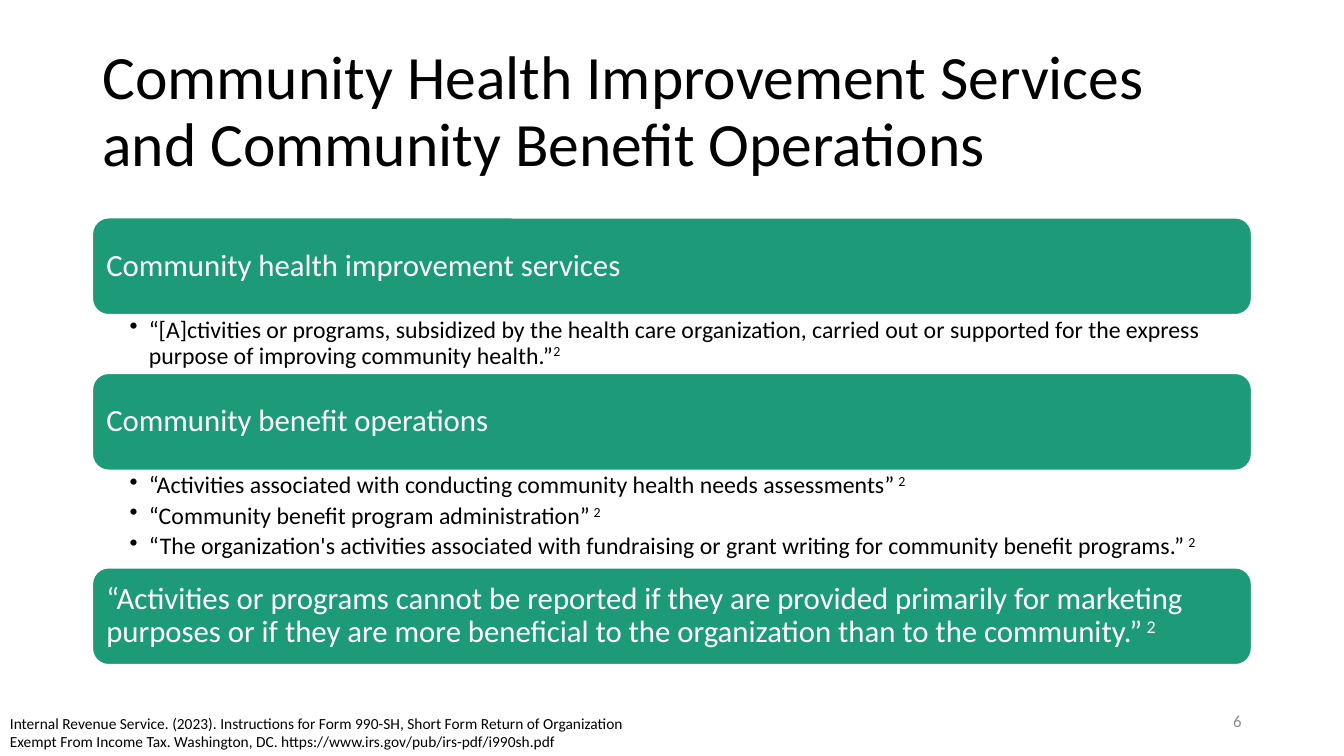
from lxml import etree
from pptx import Presentation
from pptx.dml.color import RGBColor
from pptx.enum.shapes import MSO_SHAPE
from pptx.enum.text import MSO_ANCHOR, PP_ALIGN
from pptx.oxml.ns import qn
from pptx.util import Cm, Pt

ROUND = MSO_SHAPE.ROUNDED_RECTANGLE
TOP, MIDDLE = MSO_ANCHOR.TOP, MSO_ANCHOR.MIDDLE
LEFT, RIGHT = PP_ALIGN.LEFT, PP_ALIGN.RIGHT
EDGE, WIDTH = 2.33, 29.21
PADS = (0.25, 0.13, 0.25, 0.13)

SECTIONS = [
    ("Community health improvement services", 1.48, [
        "“[A]ctivities or programs, subsidized by the health care organization, "
        "carried out or supported for the express purpose of improving "
        "community health.”^2",
    ]),
    ("Community benefit operations", 2.46, [
        "“Activities associated with conducting community health needs assessments”^ 2",
        "“Community benefit program administration”^ 2",
        "“The organization's activities associated with fundraising or grant "
        "writing for community benefit programs.”^ 2",
    ]),
    ("“Activities or programs cannot be reported if they are provided primarily "
     "for marketing purposes or if they are more beneficial to the organization "
     "than to the community.”^ 2", 0, []),
]


def color(code):
    return RGBColor.from_string(code)


def write(frame, *lines, size=18, ink="000000", align=LEFT, anchor=TOP,
          pads=PADS, pitch=1.0, after=0, bullet=False):
    frame.word_wrap = True
    frame.vertical_anchor = anchor
    (frame.margin_left, frame.margin_top,
     frame.margin_right, frame.margin_bottom) = map(Cm, pads)
    for i, line in enumerate(lines):
        para = frame.add_paragraph() if i else frame.paragraphs[0]
        para.alignment = align
        para.line_spacing = pitch
        para.space_after = Pt(after)
        if bullet:
            props = para._p.get_or_add_pPr()
            props.set("marL", str(Cm(0.48)))
            props.set("indent", str(Cm(-0.48)))
            etree.SubElement(props, qn("a:buChar")).set("char", "•")
        for j, part in enumerate(line.split("^")):
            run = para.add_run()
            run.text = part
            font = run.font
            font.name, font.size = "Calibri", Pt(size)
            font.color.rgb = color(ink)
            if j:
                run._r.get_or_add_rPr().set("baseline", "30000")


class Page:
    green, white = "1D9A78", "FFFFFF"

    def __init__(self, deck):
        self.slide = deck.slides.add_slide(deck.slide_layouts[6])

    def text(self, box, *lines, **style):
        shape = self.slide.shapes.add_textbox(*map(Cm, box))
        write(shape.text_frame, *lines, **style)

    def banner(self, box, label):
        shape = self.slide.shapes.add_shape(ROUND, *map(Cm, box))
        shape.shadow.inherit = False
        shape.fill.solid()
        shape.fill.fore_color.rgb = color(self.green)
        shape.line.color.rgb = color(self.white)
        shape.line.width = Pt(1)
        write(shape.text_frame, label, size=22, ink=self.white,
              anchor=MIDDLE, pads=(0.23,) * 4, pitch=0.9)

    def points(self, box, lines):
        self.text(box, *lines, size=17, pads=(0.94, 0.08, 0.43, 0.08),
                  pitch=0.9, after=3.4, bullet=True)


def main():
    deck = Presentation()
    deck.slide_width, deck.slide_height = Cm(33.87), Cm(19.05)
    page = Page(deck)
    page.text((EDGE, 1.01, WIDTH, 3.68),
              "Community Health Improvement Services and Community Benefit Operations",
              size=44, anchor=MIDDLE, pitch=0.9)
    top, tall = 5.49, 2.44
    for label, depth, lines in SECTIONS:
        page.banner((EDGE, top, WIDTH, tall), label)
        top += tall
        if lines:
            page.points((EDGE, top, WIDTH, depth), lines)
            top += depth
    page.text((23.92, 17.66, 7.62, 1.01), "6", size=12, ink="8C8C8C",
              align=RIGHT, anchor=MIDDLE)
    page.text((0, 17.86, 16.93, 1.19),
              "Internal Revenue Service. (2023). Instructions for Form 990-SH, "
              "Short Form Return of Organization Exempt From Income Tax. "
              "Washington, DC. https://www.irs.gov/pub/irs-pdf/i990sh.pdf",
              size=11)
    deck.save("out.pptx")


if __name__ == "__main__":
    main()
